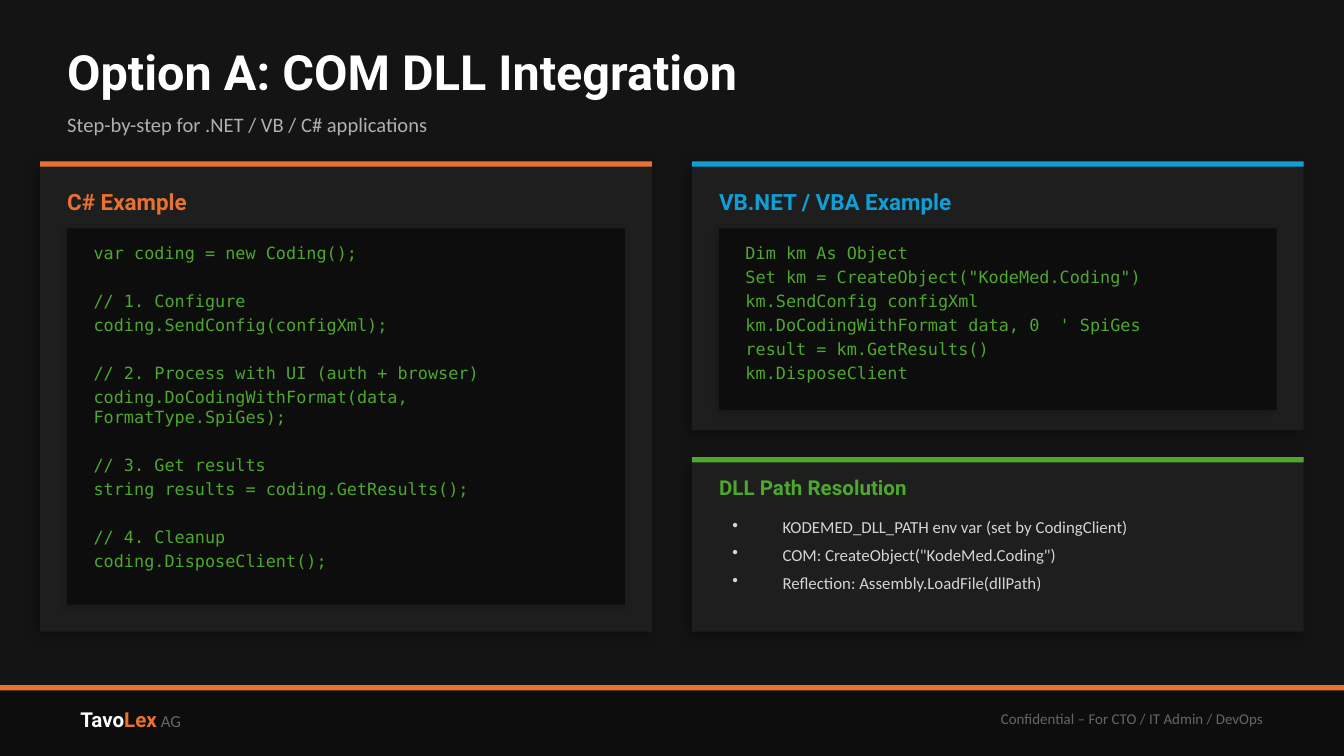
import pptx
import pptx.util
import pptx.dml.color
import pptx.enum.shapes
import pptx.enum.text
import pptx.oxml.ns
from lxml import etree

Cm, Pt = pptx.util.Cm, pptx.util.Pt
PP = pptx.enum.text.PP_ALIGN
MID = pptx.enum.text.MSO_ANCHOR.MIDDLE
TOP = pptx.enum.text.MSO_ANCHOR.TOP
HEAD, BODY, MONO = "Roboto", "Calibri", "DejaVu Sans Mono"
ORANGE, BLUE, GREEN = "E97132", "0F9ED5", "4EA72E"
BACK, DARK, CARD, GREY = "141414", "0D0D0D", "1E1E1E", "666666"

# Content: code is a list of blocks, each a list of lines
TITLE = "Option A: COM DLL Integration"
SUB = "Step-by-step for .NET / VB / C# applications"
BRAND = [("Tavo", HEAD, 11, "FFFFFF", True),
         ("Lex", HEAD, 11, ORANGE, True),
         (" AG", BODY, 9, GREY, False)]
NOTE = "Confidential – For CTO / IT Admin / DevOps"
SHARP = [
    ["var coding = new Coding();"],
    ["// 1. Configure", "coding.SendConfig(configXml);"],
    ["// 2. Process with UI (auth + browser)",
     "coding.DoCodingWithFormat(data, FormatType.SpiGes);"],
    ["// 3. Get results", "string results = coding.GetResults();"],
    ["// 4. Cleanup", "coding.DisposeClient();"],
]
BASIC = [[
    "Dim km As Object",
    'Set km = CreateObject("KodeMed.Coding")',
    "km.SendConfig configXml",
    "km.DoCodingWithFormat data, 0  ' SpiGes",
    "result = km.GetResults()",
    "km.DisposeClient",
]]
PATHS = [
    "KODEMED_DLL_PATH env var (set by CodingClient)",
    'COM: CreateObject("KodeMed.Coding")',
    "Reflection: Assembly.LoadFile(dllPath)",
]
# Code cards: column, heading, colour, blocks, card height, panel height
CODES = [
    (0, "C# Example", ORANGE, SHARP, 8.89, 7.11),
    (1, "VB.NET / VBA Example", BLUE, BASIC, 5.08, 3.43),
]

# Grid in cm
WIDE, HIGH = 25.4, 14.29
EDGE, GAP, PAD, BAR = 0.76, 0.76, 0.51, 0.1
ROW, FOOT = 3.05, 12.95
COL = (WIDE - 2 * EDGE - GAP) / 2
LINE = 12.8  # one code line with its gap, in points

deck = pptx.Presentation()
deck.slide_width, deck.slide_height = Cm(WIDE), Cm(HIGH)
slide = deck.slides.add_slide(deck.slide_layouts[5])


def tint(fmt, code):
    fmt.rgb = pptx.dml.color.RGBColor.from_string(code)


def rect(x, y, w, h, code, shade=None):
    box = slide.shapes.add_shape(pptx.enum.shapes.MSO_SHAPE.RECTANGLE,
                                 Cm(x), Cm(y), Cm(w), Cm(h))
    box.shadow.inherit = False
    box.fill.solid()
    tint(box.fill.fore_color, code)
    box.line.fill.background()
    if shade:
        alpha, blur, dist = shade
        glow = box._element.spPr.find(pptx.oxml.ns.qn("a:effectLst"))
        glow.append(pptx.oxml.parse_xml(
            f'<a:outerShdw {pptx.oxml.ns.nsdecls("a")} blurRad="{Pt(blur)}" '
            f'dist="{Pt(dist)}" dir="8100000" algn="bl" rotWithShape="0">'
            f'<a:srgbClr val="000000"><a:alpha val="{alpha * 1000}"/>'
            f'</a:srgbClr></a:outerShdw>'))


def frame(box, anchor=MID, bare=False):
    body = box.text_frame
    body.word_wrap = True
    body.auto_size = pptx.enum.text.MSO_AUTO_SIZE.NONE
    body.vertical_anchor = anchor
    if bare:
        body.margin_left = body.margin_right = 0
        body.margin_top = body.margin_bottom = 0
    return body


def area(x, y, w, h, anchor=MID, bare=False):
    box = slide.shapes.add_textbox(Cm(x), Cm(y), Cm(w), Cm(h))
    return frame(box, anchor, bare)


def write(para, text, face, size, code, bold=False):
    run = para.add_run()
    run.text = text
    run.font.name, run.font.size, run.font.bold = face, Pt(size), bold
    tint(run.font.color, code)


def lines(body):
    """Yield the first paragraph, then new ones."""
    yield body.paragraphs[0]
    while True:
        yield body.add_paragraph()


def card(x, y, h, code):
    rect(x, y, COL, h, CARD, (35, 8, 3))
    rect(x, y, COL, BAR, code)


# Background and title
slide.background.fill.solid()
tint(slide.background.fill.fore_color, BACK)
title = slide.shapes.title
title.left, title.top = Cm(1.27), Cm(0.64)
title.width, title.height = Cm(22.86), Cm(1.4)
para = frame(title, bare=True).paragraphs[0]
para.alignment = PP.LEFT
write(para, TITLE, HEAD, 26, "FFFFFF", True)
write(area(1.27, 1.9, 22.86, 0.89, bare=True).paragraphs[0],
      SUB, BODY, 11, "B0B0B0")

# Footer
rect(0, FOOT, WIDE, HIGH - FOOT, DARK)
rect(0, FOOT, WIDE, BAR, ORANGE)
para = area(1.27, 13.08, 7.62, 1.02).paragraphs[0]
for part in BRAND:
    write(para, *part)
para = area(13.97, 13.08, 10.16, 1.02).paragraphs[0]
para.alignment = PP.RIGHT
write(para, NOTE, BODY, 8, GREY)

# Code cards
for col, name, code, blocks, tall, deep in CODES:
    x = EDGE + col * (COL + GAP)
    left, wide, top = x + PAD, COL - 2 * PAD, ROW + 1.27
    card(x, ROW, tall, code)
    write(area(left, ROW + 0.38, wide, 0.76, bare=True).paragraphs[0],
          name, HEAD, 12, code, True)
    rect(left, top, wide, deep, DARK, (20, 4, 2))
    feed = lines(area(left + 0.25, top + 0.15, wide - 0.5, deep - 0.3, TOP))
    for i, block in enumerate(blocks):
        for j, text in enumerate(block):
            para = next(feed)
            para.space_after = Pt(2)
            if i and not j:
                para.space_before = Pt(LINE)
            write(para, text, MONO, 9, GREEN)

# Path card
x, y = EDGE + COL + GAP, 8.64
left, wide = x + PAD, COL - 2 * PAD
card(x, y, 3.3, GREEN)
write(area(left, y + 0.25, wide, 0.64, bare=True).paragraphs[0],
      "DLL Path Resolution", HEAD, 11, GREEN, True)
feed = lines(area(left, y + 1.01, wide, 2.03, TOP))
for text in PATHS:
    para = next(feed)
    para.space_after = Pt(4)
    props = para._p.get_or_add_pPr()
    props.set("marL", str(Cm(0.95)))
    props.set("indent", str(-Cm(0.95)))
    etree.SubElement(props, pptx.oxml.ns.qn("a:buChar")).set("char", "•")
    write(para, text, BODY, 9, "D4D4D4")

deck.save("out.pptx")
